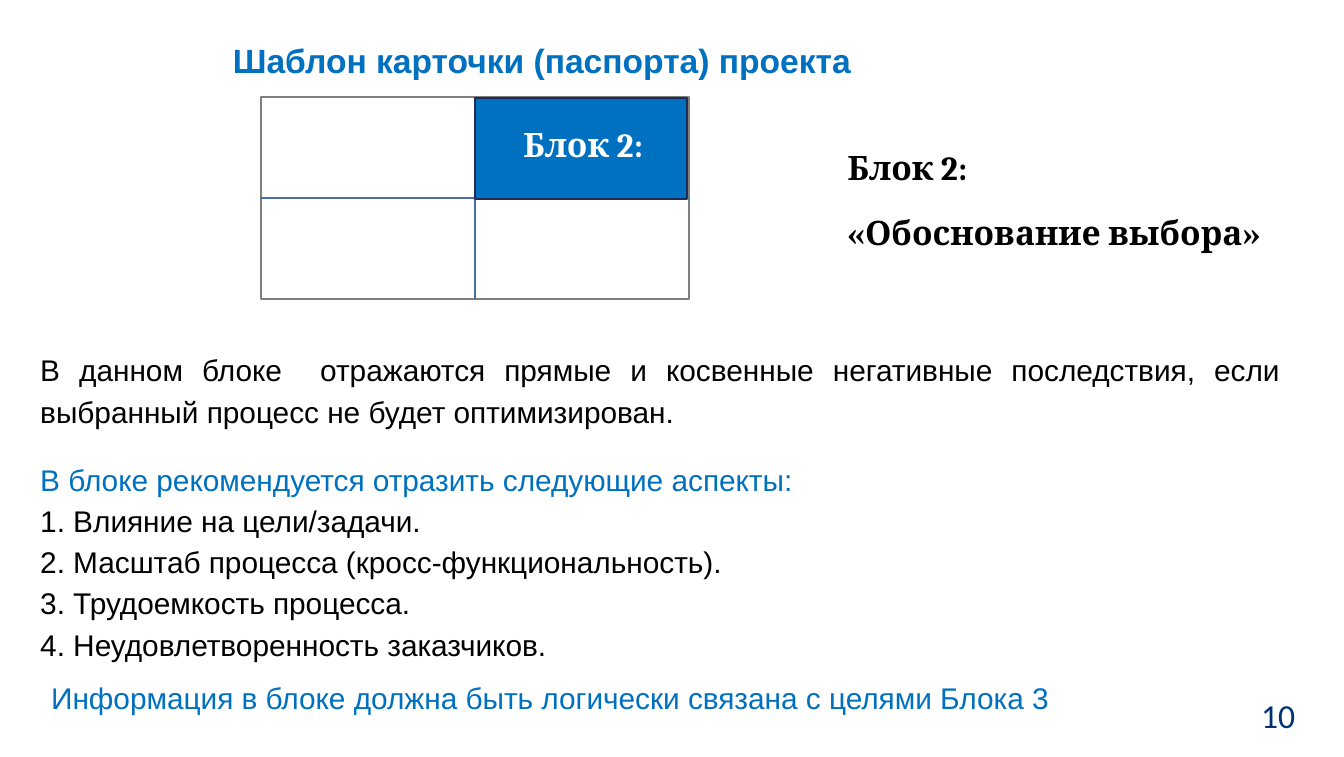
from dataclasses import dataclass

from lxml import etree
from pptx import Presentation
from pptx import util as u
from pptx.dml.color import RGBColor
from pptx.enum import shapes, text
from pptx.oxml.ns import qn

# Content
TITLE = "Шаблон карточки (паспорта) проекта"
BLOCK = "Блок 2:"
BLOCK_NAME = "«Обоснование выбора»"
INTRO = ("В данном блоке  отражаются прямые и косвенные негативные "
         "последствия, если выбранный процесс не будет оптимизирован.")
ASPECTS_HEAD = "В блоке рекомендуется отразить следующие аспекты:"
ASPECTS = [
    "1. Влияние на цели/задачи.",
    "2. Масштаб процесса (кросс-функциональность).",
    "3. Трудоемкость процесса.",
    "4. Неудовлетворенность заказчиков.",
]
FOOTNOTE = "Информация в блоке должна быть логически связана с целями Блока 3"
PAGE_NUMBER = "10"


@dataclass(frozen=True)
class Theme:
    blue: str = "0070C0"
    navy: str = "003274"
    black: str = "000000"
    white: str = "FFFFFF"
    frame: str = "7F7F7F"
    divider: str = "456EA9"
    outline: str = "1E2D51"
    body_font: str = "Arial"
    block_font: str = "Cambria"
    number_font: str = "Calibri"
    heading: int = 18
    body: int = 16
    line: int = 1


THEME = Theme()
ALIGN = text.PP_ALIGN
WIDTH, HEIGHT = u.Inches(10), u.Inches(5.63)
SCALE = WIDTH / 1344


def px(length):
    return u.Emu(round(length * SCALE))


def rgb(value):
    return RGBColor.from_string(value)


def add_text(page, area, paragraphs, *, size=THEME.body, font=THEME.body_font,
             color=THEME.black, bold=False, align=ALIGN.LEFT, spacing=None,
             wrap=True):
    """Paragraphs are (words, space before in points, colour or None)."""
    box = page.shapes.add_textbox(*map(px, area))
    frame = box.text_frame
    frame.word_wrap = wrap
    for index, (words, before, own_color) in enumerate(paragraphs):
        para = frame.paragraphs[0] if index == 0 else frame.add_paragraph()
        para.alignment = align
        if spacing:
            para.line_spacing = spacing
        if before:
            para.space_before = u.Pt(before)
        span = para.add_run()
        span.text = words
        span.font.name = font
        span.font.size = u.Pt(size)
        span.font.bold = bold
        span.font.color.rgb = rgb(own_color or color)


def add_rect(page, area, fill, line):
    rect = page.shapes.add_shape(shapes.MSO_SHAPE.RECTANGLE, *map(px, area))
    rect.shadow.inherit = False
    rect.fill.solid()
    rect.fill.fore_color.rgb = rgb(fill)
    rect.line.color.rgb = rgb(line)
    rect.line.width = u.Pt(THEME.line)
    return rect


def add_divider(page, rect, start, end):
    """Join the middles of two sides of a rectangle."""
    divider = page.shapes.add_connector(
        shapes.MSO_CONNECTOR.STRAIGHT, 0, 0, 0, 0)
    divider.begin_connect(rect, start)
    divider.end_connect(rect, end)
    divider.line.color.rgb = rgb(THEME.divider)
    divider.line.width = u.Pt(THEME.line)
    etree.SubElement(divider._element.spPr, qn("a:effectLst"))


def main():
    deck = Presentation()
    deck.slide_width, deck.slide_height = WIDTH, HEIGHT
    page = deck.slides.add_slide(deck.slide_layouts[6])

    # Page number and title
    add_text(page, (1248, 688, 93, 55), [(PAGE_NUMBER, 0, None)],
             size=THEME.heading, font=THEME.number_font, color=THEME.navy)
    add_text(page, (161, 33, 762, 63), [(TITLE, 0, None)],
             size=THEME.heading, color=THEME.blue, bold=True,
             align=ALIGN.CENTER)

    # Explanation and list of aspects
    body = [(INTRO, 0, None), (ASPECTS_HEAD, 14.5, THEME.blue)]
    body += [(aspect, 0, None) for aspect in ASPECTS]
    add_text(page, (27, 340, 1267, 332), body,
             align=ALIGN.JUSTIFY, spacing=1.15)
    add_text(page, (38, 673, 1079, 50), [(FOOTNOTE, 0, None)],
             color=THEME.blue)

    # Block name
    block_style = dict(size=THEME.heading, font=THEME.block_font, bold=True)
    add_text(page, (834, 134, 473, 126),
             [(BLOCK, 0, None), (BLOCK_NAME, 10, None)],
             align=ALIGN.JUSTIFY, spacing=1.15, **block_style)

    # Card of four blocks with the second one highlighted
    left, top, width, height = 261, 97, 428, 202
    card = add_rect(page, (left, top, width, height), THEME.white, THEME.frame)
    add_divider(page, card, 0, 2)
    add_divider(page, card, 1, 3)
    add_rect(page, (left + width // 2, top + 1, width // 2 - 2, height // 2),
             THEME.blue, THEME.outline)
    add_text(page, (506, 117, 154, 54), [(BLOCK, 0, None)],
             color=THEME.white, align=ALIGN.CENTER, wrap=False, **block_style)

    deck.save("out.pptx")


if __name__ == "__main__":
    main()
